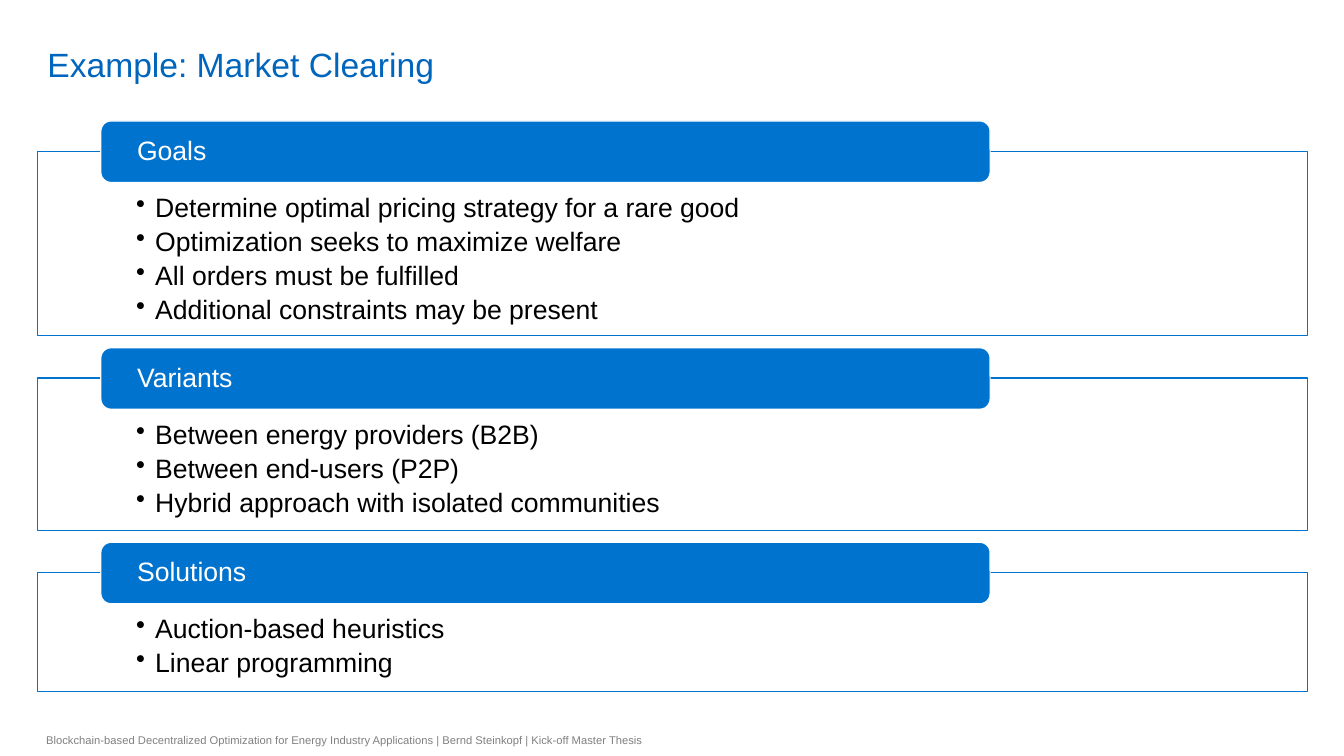
from lxml import etree
from pptx import Presentation
from pptx.dml.color import RGBColor
from pptx.enum import shapes, text
from pptx.oxml import ns
from pptx.util import Inches, Pt

COLOURS = {"title": "0065BD", "accent": "0073CF", "white": "FFFFFF",
           "body": "000000", "footer": "808080"}
SECTIONS = [
    ("Goals", 1.83, ["Determine optimal pricing strategy for a rare good",
                     "Optimization seeks to maximize welfare",
                     "All orders must be fulfilled",
                     "Additional constraints may be present"]),
    ("Variants", 1.51, ["Between energy providers (B2B)",
                        "Between end-users (P2P)",
                        "Hybrid approach with isolated communities"]),
    ("Solutions", 1.18, ["Auction-based heuristics",
                         "Linear programming"]),
]
FIRST_TOP = 1.5
SECTION_GAP = 0.42
HEADING_RISE = 0.3
FOOTER = ("Blockchain-based Decentralized Optimization for Energy Industry "
          "Applications | Bernd Steinkopf | Kick-off Master Thesis")


def rgb(name):
    return RGBColor.from_string(COLOURS[name])


def set_frame(frame, anchor, left=0.1, top=0, bottom=0):
    frame.word_wrap = True
    frame.auto_size = text.MSO_AUTO_SIZE.NONE
    frame.vertical_anchor = anchor
    frame.margin_left = frame.margin_right = Inches(left)
    frame.margin_top, frame.margin_bottom = Inches(top), Inches(bottom)


def format_text(frame, size, colour):
    for paragraph in frame.paragraphs:
        paragraph.alignment = text.PP_ALIGN.LEFT
        for run in paragraph.runs:
            run.font.name = "Arial"
            run.font.size = Pt(size)
            run.font.color.rgb = rgb(colour)


def add_bullet(paragraph):
    paragraph.line_spacing = 0.9
    paragraph.space_after = Pt(3.7)
    properties = paragraph._p.get_or_add_pPr()
    properties.set("marL", str(Inches(0.19)))
    properties.set("indent", str(-Inches(0.19)))
    etree.SubElement(properties, ns.qn("a:buChar")).set("char", "•")


def add_box(slide, kind, left, top, width, height, fill, line):
    box = slide.shapes.add_shape(kind, Inches(left), Inches(top),
                                 Inches(width), Inches(height))
    box.shadow.inherit = False
    box.fill.solid()
    box.fill.fore_color.rgb = rgb(fill)
    box.line.color.rgb = rgb(line)
    box.line.width = Pt(0.85)
    return box


def add_section(slide, top, heading, height, points):
    panel = add_box(slide, shapes.MSO_SHAPE.RECTANGLE, 0.37, top, 12.6, height,
                    "white", "accent").text_frame
    set_frame(panel, text.MSO_ANCHOR.TOP, 0.98, 0.43, 0.15)
    panel.text = "\n".join(points)
    for paragraph in panel.paragraphs:
        add_bullet(paragraph)
    format_text(panel, 19, "body")

    tab = add_box(slide, shapes.MSO_SHAPE.ROUNDED_RECTANGLE, 1,
                  top - HEADING_RISE, 8.82, 0.61, "accent", "white").text_frame
    set_frame(tab, text.MSO_ANCHOR.MIDDLE, 0.33)
    tab.text = heading
    tab.paragraphs[0].line_spacing = 0.9
    format_text(tab, 19, "white")


def add_title(slide, wording):
    title = slide.shapes.title
    title.left, title.top = Inches(0.37), Inches(0.05)
    title.width, title.height = Inches(11.58), Inches(0.79)
    set_frame(title.text_frame, text.MSO_ANCHOR.BOTTOM)
    title.text_frame.text = wording
    format_text(title.text_frame, 24, "title")


def add_footer(slide, wording):
    footer = slide.shapes.add_textbox(Inches(0.36), Inches(7.18), Inches(6.3),
                                      Inches(0.32)).text_frame
    set_frame(footer, text.MSO_ANCHOR.MIDDLE)
    footer.text = wording
    format_text(footer, 8, "footer")


def main():
    deck = Presentation()
    deck.slide_width, deck.slide_height = Inches(13.33), Inches(7.5)
    slide = deck.slides.add_slide(deck.slide_layouts[5])
    add_title(slide, "Example: Market Clearing")
    top = FIRST_TOP
    for heading, height, points in SECTIONS:
        add_section(slide, top, heading, height, points)
        top += height + SECTION_GAP
    add_footer(slide, FOOTER)
    deck.save("out.pptx")


if __name__ == "__main__":
    main()
